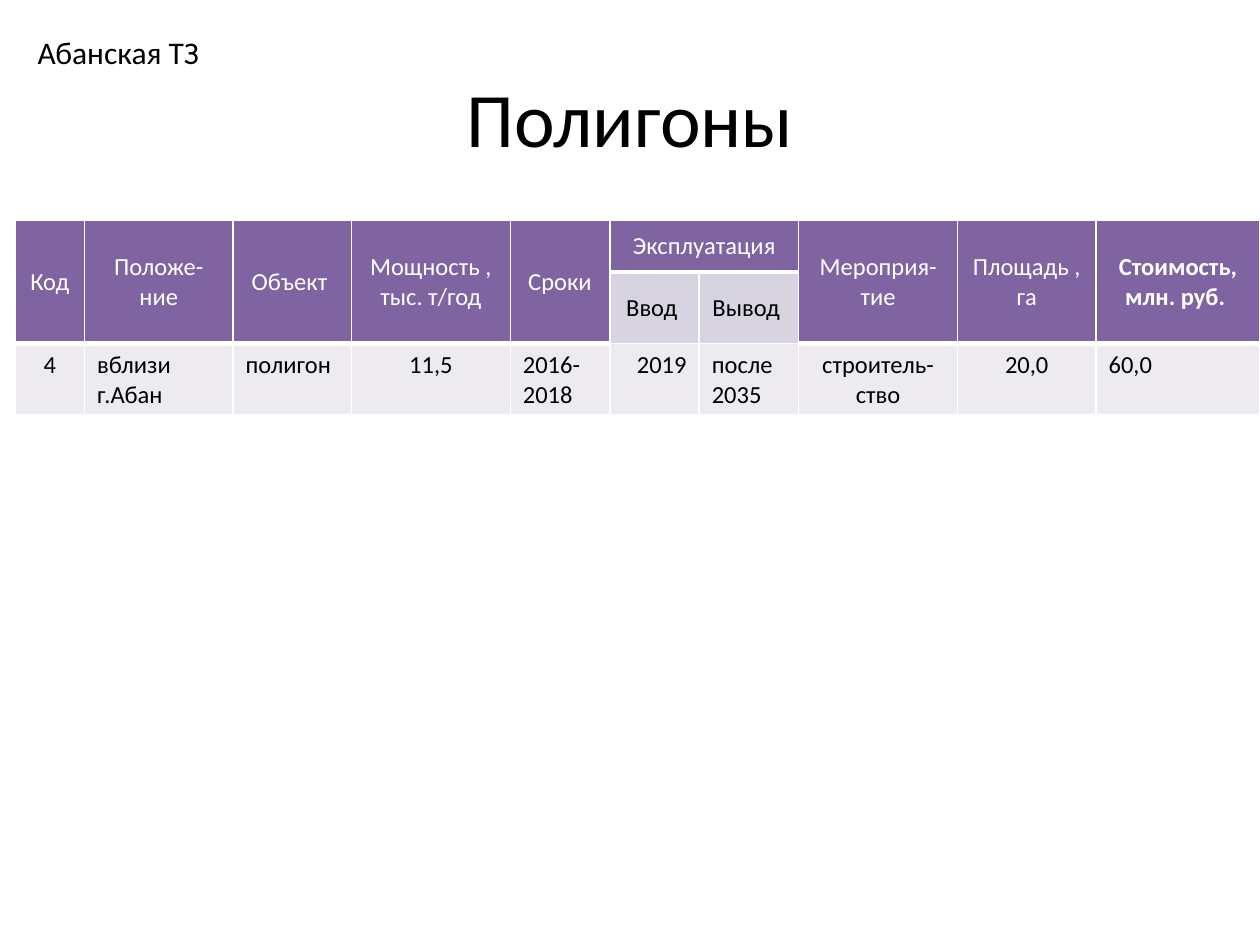
from typing import NamedTuple

from lxml.etree import SubElement
from pptx import Presentation
from pptx.dml.color import RGBColor
from pptx.enum.text import MSO_ANCHOR as Anchor, MSO_AUTO_SIZE as AutoSize, PP_ALIGN as Align
from pptx.oxml.ns import qn
from pptx.util import Inches, Pt

FONT = "Calibri"
BLACK, WHITE = "000000", "FFFFFF"
PURPLE, LILAC, PALE = "8064A2", "D8D3E0", "EDEAF0"
ROW_HEIGHT = 0.41


class Column(NamedTuple):
    width: float
    heading: str
    value: str
    align: Align = Align.CENTER
    subheading: str = ""
    bold: bool = False


COLUMNS = [
    Column(0.55, "Код", "4"),
    Column(1.18, "Положе-ние", "вблизи г.Абан", Align.LEFT),
    Column(0.94, "Объект ", "полигон", Align.LEFT),
    Column(1.26, "Мощность , тыс. т/год", "11,5"),
    Column(0.79, "Сроки", "2016-2018", Align.JUSTIFY),
    Column(0.71, "Эксплуатация", "2019", Align.RIGHT, "Ввод "),
    Column(0.79, "", "после 2035", Align.LEFT, "Вывод "),
    Column(1.26, "Мероприя-тие", "строитель-ство"),
    Column(1.1, "Площадь , га", "20,0"),
    Column(1.3, "Стоимость, млн. руб. ", "60,0", Align.LEFT, bold=True),
]


def color(value: str) -> RGBColor:
    return RGBColor.from_string(value)


def write(frame, text: str, size: float, ink: str, align: Align, bold: bool = False) -> None:
    para = frame.paragraphs[0]
    para.alignment = align
    span = para.add_run()
    span.text = text
    span.font.name = FONT
    span.font.size = Pt(size)
    span.font.bold = bold
    span.font.color.rgb = color(ink)


def add_label(page, left: float, top: float, width: float, height: float,
              text: str, size: float, align: Align):
    box = page.shapes.add_textbox(Inches(left), Inches(top), Inches(width), Inches(height))
    write(box.text_frame, text, size, BLACK, align)
    return box.text_frame


def set_borders(cell, bottom: float) -> None:
    properties = cell._tc.get_or_add_tcPr()
    for side, width in (("L", 1), ("R", 1), ("T", 1), ("B", bottom)):
        line = SubElement(properties, qn(f"a:ln{side}"), w=str(Pt(width)))
        fill = SubElement(line, qn("a:solidFill"))
        SubElement(fill, qn("a:srgbClr"), val=WHITE)


def fill_cell(cell, text: str, fill: str, ink: str, align: Align,
              bold: bool = False, anchor: Anchor = Anchor.MIDDLE, bottom: float = 1) -> None:
    set_borders(cell, bottom)
    cell.fill.solid()
    cell.fill.fore_color.rgb = color(fill)
    cell.vertical_anchor = anchor
    if text:
        write(cell.text_frame, text, 14, ink, align, bold)


def add_landfill_table(page, left: float, top: float) -> None:
    width = sum(column.width for column in COLUMNS)
    table = page.shapes.add_table(3, len(COLUMNS), Inches(left), Inches(top),
                                  Inches(width), Inches(3 * ROW_HEIGHT)).table
    for row in table.rows:
        row.height = Inches(ROW_HEIGHT)
    for index, column in enumerate(COLUMNS):
        table.columns[index].width = Inches(column.width)
        heading, subheading, value = (table.cell(row, index) for row in range(3))
        fill_cell(heading, column.heading, PURPLE, WHITE, Align.CENTER, column.bold, bottom=3)
        fill_cell(subheading, column.subheading, LILAC if column.subheading else PURPLE,
                  BLACK, Align.CENTER)
        fill_cell(value, column.value, PALE, BLACK, column.align, anchor=Anchor.TOP)
        if not column.subheading:
            heading.merge(subheading)
        elif column.heading:
            heading.merge(table.cell(0, index + 1))


def main() -> None:
    deck = Presentation()
    deck.slide_width, deck.slide_height = Inches(10), Inches(7.5)
    page = deck.slides.add_slide(deck.slide_layouts[6])

    title = add_label(page, 0.5, 0.3, 9, 1.25, "Полигоны", 44, Align.CENTER)
    title.word_wrap = True
    title.vertical_anchor = Anchor.MIDDLE
    add_landfill_table(page, 0.12, 1.75)
    zone = add_label(page, 0.2, 0.21, 1.5, 0.71, "Абанская ТЗ", 18, Align.LEFT)
    zone.word_wrap = False
    zone.auto_size = AutoSize.SHAPE_TO_FIT_TEXT

    deck.save("out.pptx")


if __name__ == "__main__":
    main()
